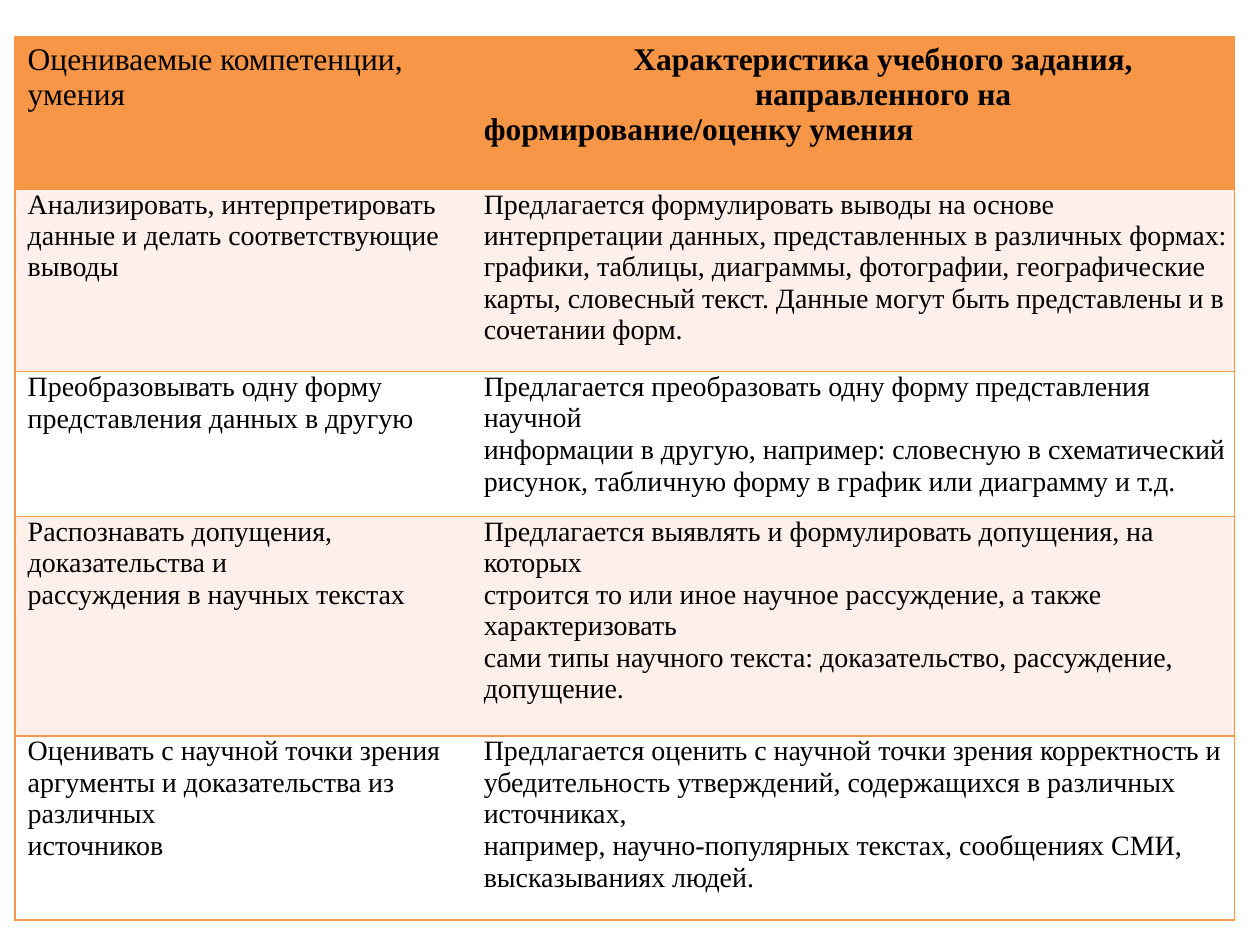
from dataclasses import dataclass

from lxml import etree
from pptx import Presentation
from pptx.dml.color import RGBColor
from pptx.enum.text import PP_ALIGN
from pptx.oxml.ns import qn
from pptx.util import Emu, Inches, Pt

CENTER = PP_ALIGN.CENTER
SIDES = ("L", "R", "T", "B")


@dataclass(frozen=True)
class Theme:
    font: str = "Times New Roman"
    text: str = "000000"
    accent: str = "F79646"
    band: str = "FDEFE9"
    plain: str = "FFFFFF"
    header_size: int = 18
    body_size: int = 16
    border: float = 1


THEME = Theme()

# Table place as shares of the slide; columns and rows as weights
LEFT, TOP, WIDTH, HEIGHT = 0.012, 0.0385, 0.968, 0.935
COLUMNS = (362, 606)
ROWS = (121, 145, 115, 174, 146)

BODY_INDENT = Inches(0.1)
HEADER_INDENT = Inches(0.48)

# Header cells: (text, paragraph format, indent)
HEADER = (
    [("Оцениваемые компетенции, умения", {}, 0)],
    [("Характеристика учебного задания, направленного на",
      {"alignment": CENTER, "space_before": Pt(3.5)}, HEADER_INDENT),
     ("формирование/оценку умения", {}, 0)],
)

# Body paragraph formats
LOOSE = {"line_spacing": 1.01, "space_before": Pt(2.5)}
LOOSE_FIRST = {"line_spacing": 1.01, "space_before": Pt(3.5)}
FIRST = {"space_before": Pt(3.5)}
NEXT = {"space_before": Pt(0.5)}
LOOSE_NEXT = {"line_spacing": 1.01, "space_before": Pt(0.5)}

# Body rows: skill, then task
BODY = (
    ([("Анализировать, интерпретировать данные и делать соответствующие выводы", LOOSE)],
     [("Предлагается формулировать выводы на основе интерпретации данных, "
       "представленных в различных формах: графики, таблицы, диаграммы, "
       "фотографии, географические карты, словесный текст. Данные могут быть "
       "представлены и в сочетании форм.", LOOSE)]),
    ([("Преобразовывать одну форму представления данных в другую", LOOSE_FIRST)],
     [("Предлагается преобразовать одну форму представления научной", FIRST),
      ("информации в другую, например: словесную в схематический рисунок, "
       "табличную форму в график или диаграмму и т.д.", LOOSE_NEXT)]),
    ([("Распознавать допущения, доказательства и", FIRST),
      ("рассуждения в научных текстах", NEXT)],
     [("Предлагается выявлять и формулировать допущения, на которых", FIRST),
      ("строится то или иное научное рассуждение, а также характеризовать", NEXT),
      ("сами типы научного текста: доказательство, рассуждение, допущение.", NEXT)]),
    ([("Оценивать c научной точки зрения", FIRST),
      ("аргументы и доказательства из различных", NEXT),
      ("источников", NEXT)],
     [("Предлагается оценить с научной точки зрения корректность и", FIRST),
      ("убедительность утверждений, содержащихся в различных источниках,", NEXT),
      ("например, научно-популярных текстах, сообщениях СМИ,", NEXT),
      ("высказываниях людей.", NEXT)]),
)


def apply_format(target, values):
    for name, value in values.items():
        setattr(target, name, value)


def set_borders(cell, hidden_side):
    """Draw every side of a cell except the one between the columns."""
    properties = cell._tc.get_or_add_tcPr()
    for side in SIDES:
        line = etree.SubElement(properties, qn(f"a:ln{side}"), w=str(Pt(THEME.border)))
        if side == hidden_side:
            etree.SubElement(line, qn("a:noFill"))
        else:
            fill = etree.SubElement(line, qn("a:solidFill"))
            etree.SubElement(fill, qn("a:srgbClr"), val=THEME.accent)


def style_cell(cell, column, fill):
    set_borders(cell, "L" if column else "R")
    cell.fill.solid()
    cell.fill.fore_color.rgb = RGBColor.from_string(fill)


def write_paragraphs(cell, paragraphs, size, bold):
    frame = cell.text_frame
    for index, (text, values, indent) in enumerate(paragraphs):
        paragraph = frame.add_paragraph() if index else frame.paragraphs[0]
        apply_format(paragraph, values)
        paragraph._p.get_or_add_pPr().set("marL", str(indent))
        run = paragraph.add_run()
        run.text = text
        apply_format(run.font, {"name": THEME.font, "size": Pt(size), "bold": bold})
        run.font.color.rgb = RGBColor.from_string(THEME.text)


def add_grid(presentation, slide):
    width = presentation.slide_width * WIDTH
    height = presentation.slide_height * HEIGHT
    table = slide.shapes.add_table(
        len(ROWS), len(COLUMNS),
        Emu(int(presentation.slide_width * LEFT)),
        Emu(int(presentation.slide_height * TOP)),
        Emu(int(width)), Emu(int(height))).table
    apply_format(table, {"first_row": False, "horz_banding": False})
    for column, weight in zip(table.columns, COLUMNS):
        column.width = Emu(int(width * weight / sum(COLUMNS)))
    for row, weight in zip(table.rows, ROWS):
        row.height = Emu(int(height * weight / sum(ROWS)))
    return table


def fill_header(table):
    for column, paragraphs in enumerate(HEADER):
        cell = table.cell(0, column)
        style_cell(cell, column, THEME.accent)
        write_paragraphs(cell, paragraphs, THEME.header_size, bold=column == 1)


def fill_body(table):
    margins = dict.fromkeys(
        ("margin_left", "margin_right", "margin_top", "margin_bottom"), 0)
    for row, cells in enumerate(BODY, start=1):
        for column, content in enumerate(cells):
            cell = table.cell(row, column)
            apply_format(cell, margins)
            style_cell(cell, column, THEME.band if row % 2 else THEME.plain)
            paragraphs = [(text, values, BODY_INDENT) for text, values in content]
            write_paragraphs(cell, paragraphs, THEME.body_size, bold=False)


def main():
    presentation = Presentation()
    apply_format(presentation, {"slide_width": Inches(10), "slide_height": Inches(7.5)})
    slide = presentation.slides.add_slide(presentation.slide_layouts[6])
    table = add_grid(presentation, slide)
    fill_header(table)
    fill_body(table)
    presentation.save("out.pptx")


if __name__ == "__main__":
    main()
